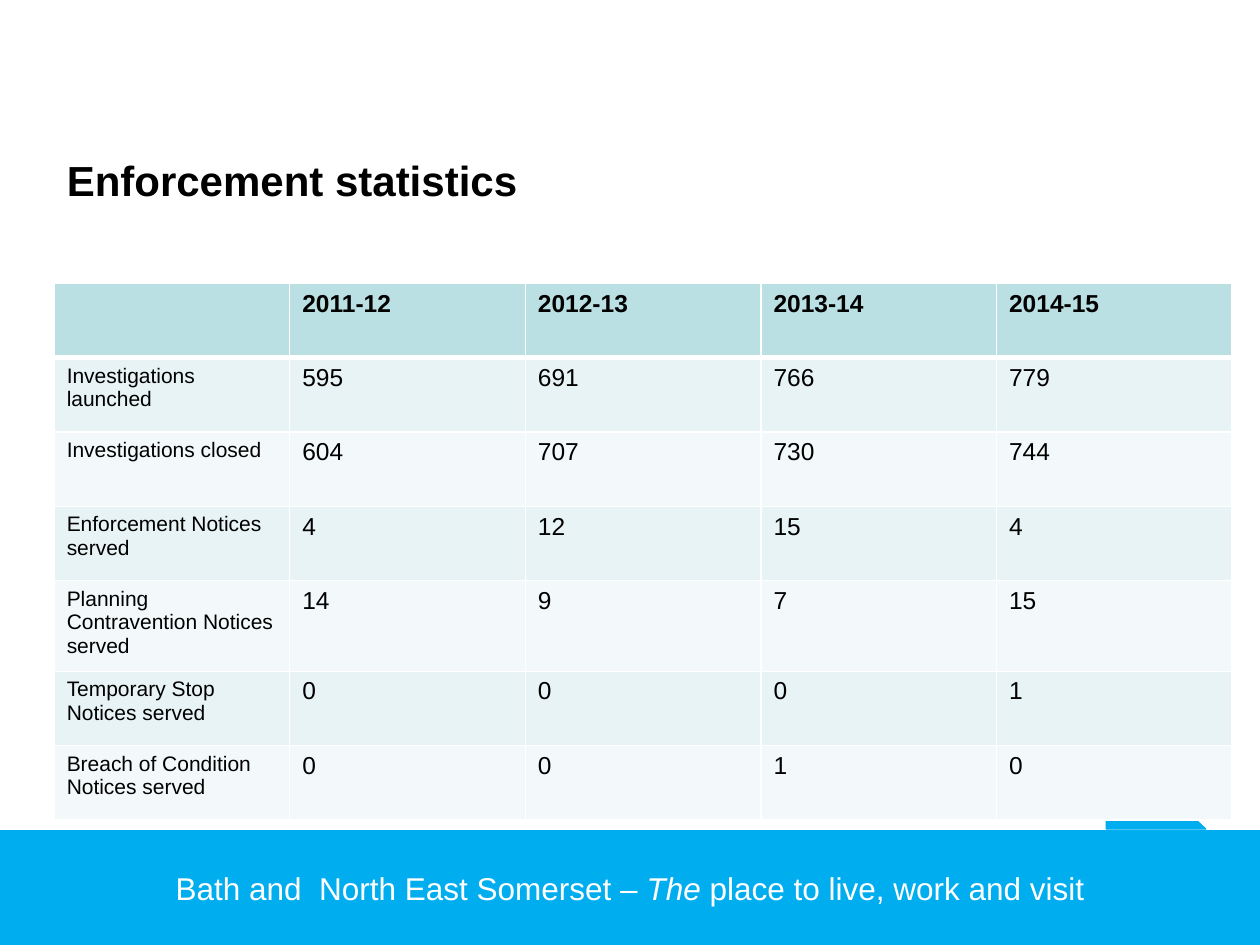
from lxml import etree
from pptx import Presentation
from pptx.dml.color import RGBColor
from pptx.enum.shapes import MSO_SHAPE as Shape
from pptx.enum.text import MSO_ANCHOR as Anchor, PP_ALIGN as Align
from pptx.oxml.ns import qn
from pptx.util import Inches, Pt

BLUE = RGBColor(0x00, 0xAE, 0xEF)
WHITE = RGBColor(0xFF, 0xFF, 0xFF)
BLACK = RGBColor(0x00, 0x00, 0x00)
HEADER_FILL = RGBColor(0xBB, 0xE0, 0xE3)
BAND_FILLS = [RGBColor(0xF3, 0xF9, 0xFA), RGBColor(0xE7, 0xF3, 0xF4)]

ROWS = [
    ["", "2011-12", "2012-13", "2013-14", "2014-15"],
    ["Investigations launched", "595", "691", "766", "779"],
    ["Investigations closed", "604", "707", "730", "744"],
    ["Enforcement Notices served", "4", "12", "15", "4"],
    ["Planning Contravention Notices served", "14", "9", "7", "15"],
    ["Temporary Stop Notices served", "0", "0", "0", "1"],
    ["Breach of Condition Notices served", "0", "0", "1", "0"],
]
ROW_HEIGHTS = [0.59, 0.59, 0.59, 0.59, 0.72, 0.59, 0.59]
COLUMN_WIDTH = 1.87


def set_font(font, size, color, bold=False):
    font.name = "Arial"
    font.size = Pt(size)
    font.bold = bold
    font.color.rgb = color


def add_border(cell, side, points):
    """Draw a white border on one side (L, R, T or B); call before filling the cell."""
    line = etree.SubElement(cell._tc.get_or_add_tcPr(), qn(f"a:ln{side}"), w=str(Pt(points)))
    fill = etree.SubElement(line, qn("a:solidFill"))
    etree.SubElement(fill, qn("a:srgbClr"), val=str(WHITE))


presentation = Presentation()
presentation.slide_width = Inches(10)
presentation.slide_height = Inches(7.5)
slide = presentation.slides.add_slide(presentation.slide_layouts[5])

# Footer band with its corner triangle
triangle = slide.shapes.add_shape(
    Shape.RIGHT_TRIANGLE, Inches(8.78), Inches(5.85), Inches(0.79), Inches(0.73))
band = slide.shapes.add_shape(
    Shape.RECTANGLE, Inches(0), Inches(6.59), Inches(10), Inches(0.91))
for shape in (triangle, band):
    shape.shadow.inherit = False
    shape.fill.solid()
    shape.fill.fore_color.rgb = BLUE
    shape.line.color.rgb = BLUE
    shape.line.width = Pt(0.75)

band.text_frame.word_wrap = False
band.text_frame.vertical_anchor = Anchor.MIDDLE
paragraph = band.text_frame.paragraphs[0]
paragraph.alignment = Align.CENTER
set_font(paragraph.font, 18, WHITE)
for text, italic in [("Bath and  North East Somerset – ", False), ("The", True),
                     (" place to live, work and visit", False)]:
    run = paragraph.add_run()
    run.text = text
    run.font.italic = italic

# Title
title = slide.shapes.title
title.left, title.top = Inches(0.43), Inches(0.99)
title.width, title.height = Inches(8.27), Inches(0.87)
title.text_frame.text = "Enforcement statistics"
title.text_frame.vertical_anchor = Anchor.MIDDLE
paragraph = title.text_frame.paragraphs[0]
paragraph.alignment = Align.LEFT
set_font(paragraph.font, 24, BLACK, bold=True)

# Statistics table
table = slide.shapes.add_table(
    len(ROWS), len(ROWS[0]), Inches(0.43), Inches(2.25),
    Inches(COLUMN_WIDTH * len(ROWS[0])), Inches(sum(ROW_HEIGHTS))).table
for column in table.columns:
    column.width = Inches(COLUMN_WIDTH)
for row_index, (values, height) in enumerate(zip(ROWS, ROW_HEIGHTS)):
    table.rows[row_index].height = Inches(height)
    is_header = row_index == 0
    for column_index, value in enumerate(values):
        cell = table.cell(row_index, column_index)
        add_border(cell, "L", 1)
        add_border(cell, "R", 1)
        add_border(cell, "T", 3 if row_index == 1 else 1)
        add_border(cell, "B", 3 if is_header else 1)
        cell.fill.solid()
        cell.fill.fore_color.rgb = HEADER_FILL if is_header else BAND_FILLS[row_index % 2]
        cell.text = value
        size = 12 if column_index == 0 else 14
        set_font(cell.text_frame.paragraphs[0].font, size, BLACK, bold=is_header)

presentation.save("out.pptx")
